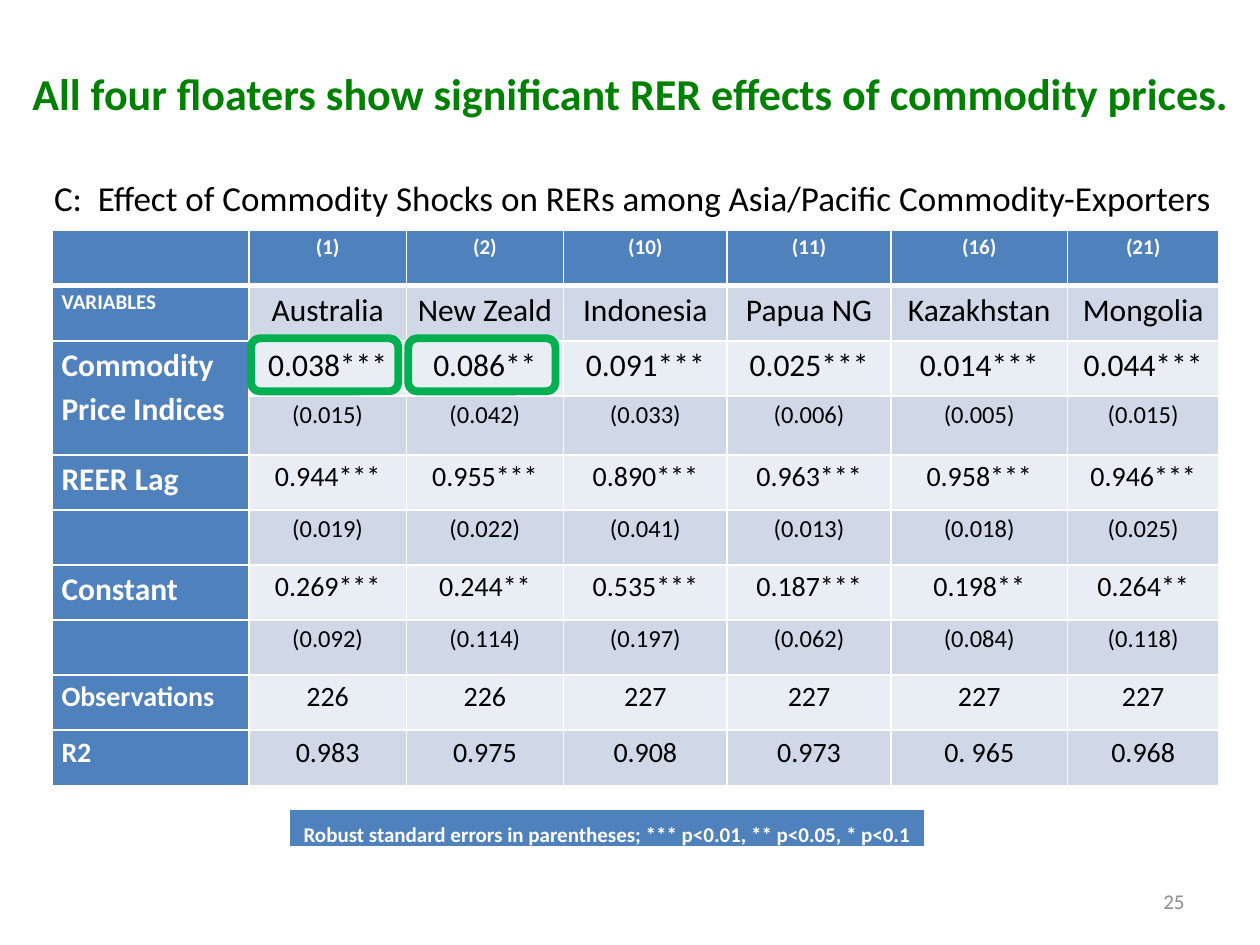
from dataclasses import dataclass
from itertools import accumulate

from lxml.etree import SubElement
from pptx import Presentation
from pptx.dml.color import RGBColor
from pptx.enum.shapes import MSO_SHAPE
from pptx.enum.text import MSO_ANCHOR, PP_ALIGN
from pptx.oxml.ns import qn
from pptx.util import Cm, Pt


@dataclass(frozen=True)
class Theme:
    font: str = "Calibri"
    title: str = "008000"
    text: str = "000000"
    light: str = "FFFFFF"
    muted: str = "8C8C8C"
    accent: str = "4F81BD"
    bands: tuple = ("E9EDF4", "D0D8E8")
    highlight: str = "00B050"
    title_size: float = 25.2
    caption_size: float = 20
    main_size: float = 18
    value_size: float = 16
    error_size: float = 14
    small_size: float = 12


THEME = Theme()
TITLE = "All four floaters show significant RER effects of commodity prices."
CAPTION = "C:  Effect of Commodity Shocks on RERs among Asia/Pacific Commodity-Exporters"
FOOTNOTE = "Robust standard errors in parentheses; *** p<0.01, ** p<0.05, * p<0.1"
PAGE_NUMBER = "25"

MAIN, VALUE, ERROR, SMALL = THEME.main_size, THEME.value_size, THEME.error_size, THEME.small_size
ROWS = [
    ("", SMALL, SMALL, ["(1)", "(2)", "(10)", "(11)", "(16)", "(21)"]),
    ("VARIABLES", SMALL, MAIN,
     ["Australia", "New Zeald", "Indonesia", "Papua NG", "Kazakhstan", "Mongolia"]),
    ("Commodity Price Indices", MAIN, MAIN,
     ["0.038***", "0.086**", "0.091***", "0.025***", "0.014***", "0.044***"]),
    ("", MAIN, ERROR, ["(0.015)", "(0.042)", "(0.033)", "(0.006)", "(0.005)", "(0.015)"]),
    ("REER Lag", MAIN, VALUE,
     ["0.944***", "0.955***", "0.890***", "0.963***", "0.958***", "0.946***"]),
    ("", MAIN, ERROR, ["(0.019)", "(0.022)", "(0.041)", "(0.013)", "(0.018)", "(0.025)"]),
    ("Constant", MAIN, VALUE,
     ["0.269***", "0.244**", "0.535***", "0.187***", "0.198**", "0.264**"]),
    ("", MAIN, ERROR, ["(0.092)", "(0.114)", "(0.197)", "(0.062)", "(0.084)", "(0.118)"]),
    ("Observations", VALUE, VALUE, ["226", "226", "227", "227", "227", "227"]),
    ("R2", VALUE, VALUE, ["0.983", "0.975", "0.908", "0.973", "0. 965", "0.968"]),
]
COMMODITY_ROW = 2
HIGHLIGHTED_COLUMNS = (1, 2)
TABLE_LEFT, TABLE_TOP = 1.06, 4.65
COLUMN_WIDTHS = [3.96, 3.17, 3.17, 3.3, 3.3, 3.56, 3.05]
ROW_HEIGHTS = [1.19 if row == 3 else 1.11 for row in range(len(ROWS))]


def style_paragraph(paragraph, text, size, color, bold=False, align=PP_ALIGN.LEFT):
    paragraph.text = text
    paragraph.alignment = align
    font = paragraph.font
    font.name, font.size, font.bold = THEME.font, Pt(size), bold
    font.color.rgb = RGBColor.from_string(color)


def add_text(slide, box, text, size, color, anchor=MSO_ANCHOR.TOP, **style):
    frame = slide.shapes.add_textbox(*map(Cm, box)).text_frame
    frame.word_wrap = True
    frame.vertical_anchor = anchor
    style_paragraph(frame.paragraphs[0], text, size, color, **style)


def add_border(cell, side, width):
    line = SubElement(cell._tc.get_or_add_tcPr(), qn(f"a:ln{side}"), w=str(Pt(width)))
    fill = SubElement(line, qn("a:solidFill"))
    SubElement(fill, qn("a:srgbClr"), val=THEME.light)


def style_cell(cell, text, size, color, fill, top=1, bottom=1, **style):
    cell.margin_left = cell.margin_right = Cm(0.18)
    cell.margin_top = cell.margin_bottom = 0
    for side, width in zip("LRTB", (1, 1, top, bottom)):
        add_border(cell, side, width)
    cell.fill.solid()
    cell.fill.fore_color.rgb = RGBColor.from_string(fill)
    paragraph = cell.text_frame.paragraphs[0]
    style_paragraph(paragraph, text, size, color, **style)
    paragraph.line_spacing = 1.15


def add_table(slide, left, top, widths, heights):
    box = map(Cm, (left, top, sum(widths), sum(heights)))
    table = slide.shapes.add_table(len(heights), len(widths), *box).table
    for column, width in zip(table.columns, widths):
        column.width = Cm(width)
    for row, height in zip(table.rows, heights):
        row.height = Cm(height)
    return table


def add_results(slide):
    table = add_table(slide, TABLE_LEFT, TABLE_TOP, COLUMN_WIDTHS, ROW_HEIGHTS)
    for row, (label, label_size, value_size, values) in enumerate(ROWS):
        header = row == 0
        edges = {"top": 3 if row == 1 else 1, "bottom": 3 if header else 1}
        style_cell(table.cell(row, 0), label, label_size, THEME.light, THEME.accent,
                   bold=True, **edges)
        color = THEME.light if header else THEME.text
        fill = THEME.accent if header else THEME.bands[row % 2]
        for column, value in enumerate(values, start=1):
            style_cell(table.cell(row, column), value, value_size, color, fill,
                       bold=header, align=PP_ALIGN.CENTER, **edges)
    table.cell(COMMODITY_ROW, 0).merge(table.cell(COMMODITY_ROW + 1, 0))


def add_footnote(slide):
    cell = add_table(slide, 5.84, 16.31, [12.8], [0.79]).cell(0, 0)
    style_cell(cell, FOOTNOTE, SMALL, THEME.light, THEME.accent, bottom=3, bold=True)
    cell.margin_left, cell.margin_top = Cm(0.28), Cm(0.2)


def add_highlights(slide):
    column_lefts = list(accumulate(COLUMN_WIDTHS, initial=TABLE_LEFT))
    top = TABLE_TOP + sum(ROW_HEIGHTS[:COMMODITY_ROW]) - 0.05
    for column in HIGHLIGHTED_COLUMNS:
        box = map(Cm, (column_lefts[column] + 0.04, top, 2.97, 1.07))
        shape = slide.shapes.add_shape(MSO_SHAPE.ROUNDED_RECTANGLE, *box)
        shape.shadow.inherit = False
        shape.fill.background()
        shape.line.color.rgb = RGBColor.from_string(THEME.highlight)
        shape.line.width = Pt(4.5)


def main():
    """Build the slide on commodity shocks and real exchange rates."""
    presentation = Presentation()
    presentation.slide_width, presentation.slide_height = Cm(25.4), Cm(19.05)
    slide = presentation.slides.add_slide(presentation.slide_layouts[6])
    add_text(slide, (0.23, 0.76, 24.97, 2.21), TITLE, THEME.title_size, THEME.title,
             anchor=MSO_ANCHOR.MIDDLE, bold=True, align=PP_ALIGN.CENTER)
    add_results(slide)
    add_text(slide, (0.84, 3.43, 24.56, 1.12), CAPTION, THEME.caption_size, THEME.text)
    add_footnote(slide)
    add_highlights(slide)
    add_text(slide, (18.21, 17.65, 5.92, 1.02), PAGE_NUMBER, SMALL, THEME.muted,
             anchor=MSO_ANCHOR.MIDDLE, align=PP_ALIGN.RIGHT)
    presentation.save("out.pptx")


if __name__ == "__main__":
    main()
